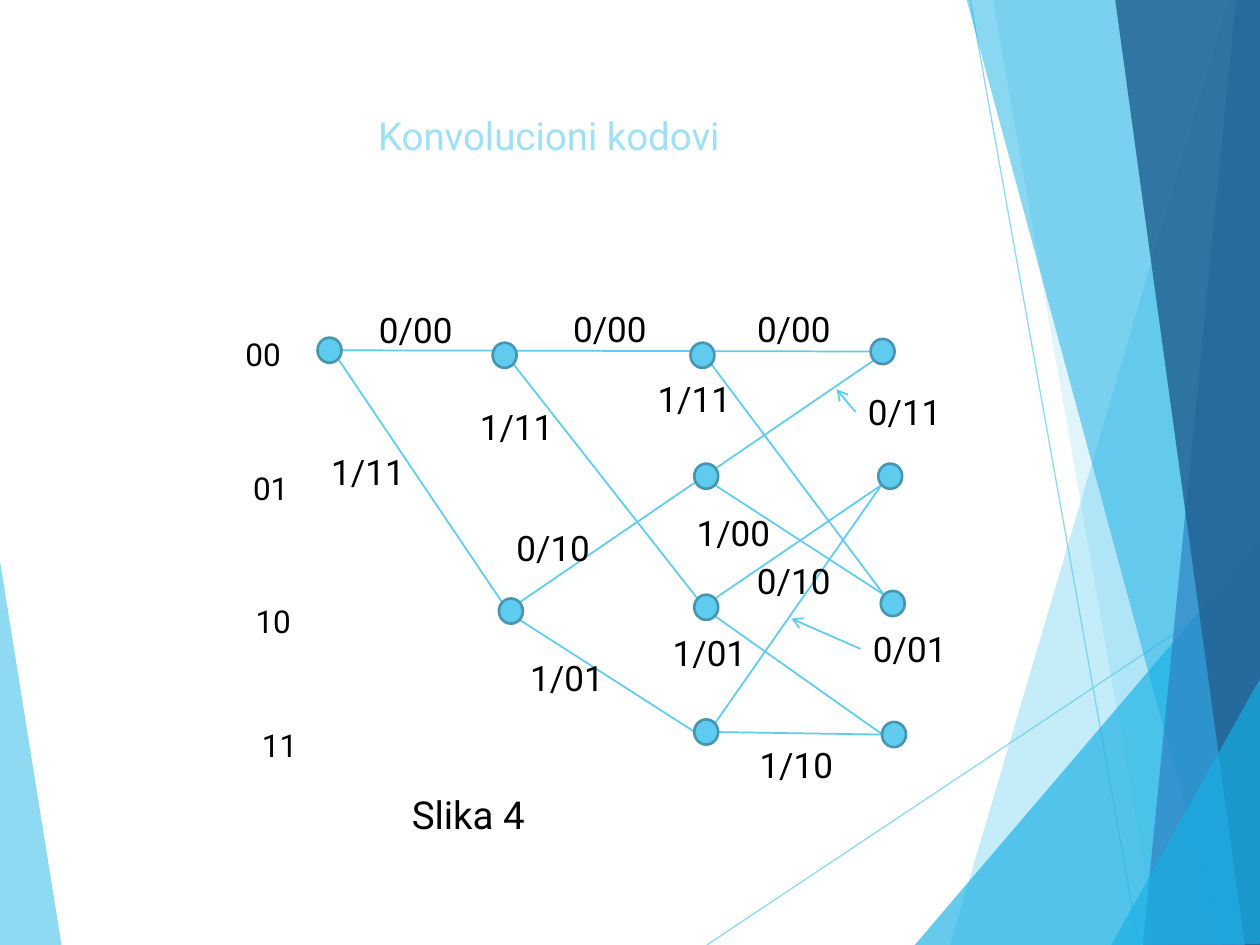
import pptx
import pptx.dml.color
import pptx.enum.shapes
import pptx.enum.text
import pptx.oxml
import pptx.util
from typing import NamedTuple

Inches = pptx.util.Inches
Pt = pptx.util.Pt
RGB = pptx.dml.color.RGBColor
NS = "http://schemas.openxmlformats.org/drawingml/2006/main"

SKY = RGB(0x5F, 0xCB, 0xEF)
CYAN = RGB(0x17, 0xB0, 0xE4)
BLUE = RGB(0x2E, 0x83, 0xC3)
NAVY = RGB(0x22, 0x62, 0x92)
RIM = RGB(0x46, 0x96, 0xB1)
PALE = RGB(0x9F, 0xE0, 0xF5)
BLACK = RGB(0, 0, 0)
FONT = "Roboto"
NODE_W, NODE_H = 0.19, 0.2


class Band(NamedTuple):
    color: RGB
    alpha: int
    points: list


class Edge(NamedTuple):
    start: str
    out: str
    end: str
    into: str


class Label(NamedTuple):
    text: str
    x: float
    y: float
    w: float
    size: int = 20


BANDS = [
    Band(SKY, 70, [(-0.01, 4.39), (0.49, 7.51), (-0.01, 7.5)]),
    Band(SKY, 36, [(9.75, 0), (7.54, 7.5), (10.02, 7.51), (10.01, 0.01)]),
    Band(SKY, 20, [(7.88, -0.01), (9.19, 7.5), (10.01, 7.5), (10.01, -0.01)]),
    Band(CYAN, 66, [(7.26, 7.5), (10, 4.29), (10.01, 7.5)]),
    Band(CYAN, 50, [(7.67, -0.01), (9.7, 7.5), (10.01, 7.49), (10.01, -0.01)]),
    Band(BLUE, 70, [(9.81, -0.01), (9.07, 7.5), (10.01, 7.5), (10, -0.01)]),
    Band(NAVY, 82, [(8.85, -0.01), (9.88, 7.5), (10.02, 7.5), (10, -0.01)]),
    Band(CYAN, 66, [(8.82, 7.5), (10.02, 5.35), (10.02, 7.49)]),
]
RAYS = [(5.61, 7.5, 10.01, 4.57), (7.7, 0, 9.04, 7.5)]

# Trellis nodes, named by state and step
NODES = {
    "00.0": (2.52, 2.68), "00.1": (3.91, 2.72),
    "00.2": (5.48, 2.72), "00.3": (6.91, 2.69),
    "01.2": (5.51, 3.68), "01.3": (6.97, 3.68),
    "10.1": (3.96, 4.75), "10.2": (5.51, 4.72), "10.3": (6.99, 4.69),
    "11.2": (5.51, 5.71), "11.3": (7, 5.73),
}
# Offsets from a node's centre to points on its rim
RIMS = {"left": (-0.09, 0), "right": (0.09, 0),
        "nw": (-0.07, -0.07), "ne": (0.07, -0.07),
        "sw": (-0.07, 0.07), "se": (0.07, 0.07)}
EDGES = [
    Edge("00.0", "right", "00.3", "left"),
    Edge("00.0", "se", "10.1", "nw"),
    Edge("10.1", "se", "11.2", "left"),
    Edge("11.2", "right", "11.3", "left"),
    Edge("00.1", "se", "10.2", "nw"),
    Edge("00.2", "se", "10.3", "nw"),
    Edge("10.1", "ne", "00.3", "sw"),
    Edge("01.2", "se", "10.3", "nw"),
    Edge("01.3", "sw", "10.2", "ne"),
    Edge("01.3", "sw", "11.2", "ne"),
    Edge("10.2", "se", "11.3", "left"),
]
ARROWS = [(6.83, 5.15, 6.28, 4.91), (6.79, 3.27, 6.64, 3.09)]
LABELS = [
    Label("00", 1.85, 2.61, 0.73, 18), Label("01", 1.91, 3.67, 0.59, 18),
    Label("10", 1.93, 4.73, 0.54, 18), Label("11", 1.98, 5.71, 0.58, 18),
    Label("1/11", 2.53, 3.53, 0.88), Label("1/11", 3.71, 3.17, 0.91),
    Label("1/11", 5.12, 2.95, 0.91), Label("0/11", 6.79, 3.05, 0.87),
    Label("0/10", 4, 4.13, 0.99), Label("1/01", 4.11, 5.16, 0.95),
    Label("1/10", 5.93, 5.85, 0.8), Label("0/01", 6.83, 4.93, 0.89),
    Label("1/01", 5.24, 4.96, 0.83), Label("1/00", 5.43, 4.01, 0.99),
    Label("0/10", 5.91, 4.39, 0.84), Label("0/00", 2.91, 2.4, 0.8),
    Label("0/00", 4.45, 2.39, 0.89), Label("0/00", 5.91, 2.39, 0.85),
    Label("Slika 4", 3.17, 6.23, 1.4, 22),
]


def fade(shape, alpha: int) -> None:
    """Make the shape's one explicit colour partly transparent."""
    color = next(shape._element.spPr.iter(f"{{{NS}}}srgbClr"))
    color.append(pptx.oxml.parse_xml(
        f'<a:alpha xmlns:a="{NS}" val="{alpha * 1000}"/>'))


def add_line(shapes, x1: float, y1: float, x2: float, y2: float,
             width: float = 1, arrow: bool = False):
    line = shapes.add_connector(
        pptx.enum.shapes.MSO_CONNECTOR.STRAIGHT,
        Inches(x1), Inches(y1), Inches(x2), Inches(y2))
    line.line.color.rgb = SKY
    line.line.width = Pt(width)
    if arrow:
        line.line._get_or_add_ln().append(pptx.oxml.parse_xml(
            f'<a:tailEnd xmlns:a="{NS}" type="arrow"/>'))
    line._element.spPr.append(pptx.oxml.parse_xml(
        f'<a:effectLst xmlns:a="{NS}"/>'))
    return line


def add_band(shapes, band: Band) -> None:
    first, *rest = [(Inches(x), Inches(y)) for x, y in band.points]
    path = shapes.build_freeform(*first)
    path.add_line_segments(rest, close=True)
    shape = path.convert_to_shape()
    shape.shadow.inherit = False
    shape.fill.solid()
    shape.fill.fore_color.rgb = band.color
    shape.line.fill.background()
    fade(shape, band.alpha)


def add_node(shapes, x: float, y: float) -> None:
    node = shapes.add_shape(
        pptx.enum.shapes.MSO_SHAPE.OVAL,
        Inches(x), Inches(y), Inches(NODE_W), Inches(NODE_H))
    node.shadow.inherit = False
    node.fill.solid()
    node.fill.fore_color.rgb = SKY
    node.line.color.rgb = RIM
    node.line.width = Pt(1.5)


def rim(name: str, side: str) -> tuple:
    x, y = NODES[name]
    dx, dy = RIMS[side]
    return x + NODE_W / 2 + dx, y + NODE_H / 2 + dy


def set_text(shape, text: str, size: int, color: RGB) -> None:
    frame = shape.text_frame
    frame.text = text
    para = frame.paragraphs[0]
    para.alignment = pptx.enum.text.PP_ALIGN.LEFT
    font = para.runs[0].font
    font.name, font.size, font.color.rgb = FONT, Pt(size), color


def add_label(shapes, label: Label) -> None:
    box = shapes.add_textbox(Inches(label.x), Inches(label.y),
                             Inches(label.w), Inches(label.size * 0.022))
    box.text_frame.word_wrap = True
    set_text(box, label.text, label.size, BLACK)


def main() -> None:
    deck = pptx.Presentation()
    deck.slide_width, deck.slide_height = Inches(10), Inches(7.5)
    slide = deck.slides.add_slide(deck.slide_layouts[5])
    shapes = slide.shapes

    # Backdrop
    for ray in RAYS:
        fade(add_line(shapes, *ray, width=0.75), 70)
    for band in BANDS:
        add_band(shapes, band)

    # Title
    title = shapes.title
    title.left, title.top = Inches(2.9), Inches(0.84)
    title.width, title.height = Inches(2.93), Inches(0.47)
    set_text(title, "Konvolucioni kodovi", 22, PALE)
    title.text_frame.word_wrap = False
    title.text_frame.vertical_anchor = pptx.enum.text.MSO_ANCHOR.TOP

    # Trellis
    for edge in EDGES:
        add_line(shapes, *rim(edge.start, edge.out), *rim(edge.end, edge.into))
    for spot in NODES.values():
        add_node(shapes, *spot)

    # Labels and their pointers
    for label in LABELS:
        add_label(shapes, label)
    for arrow in ARROWS:
        add_line(shapes, *arrow, arrow=True)

    deck.save("out.pptx")


if __name__ == "__main__":
    main()
